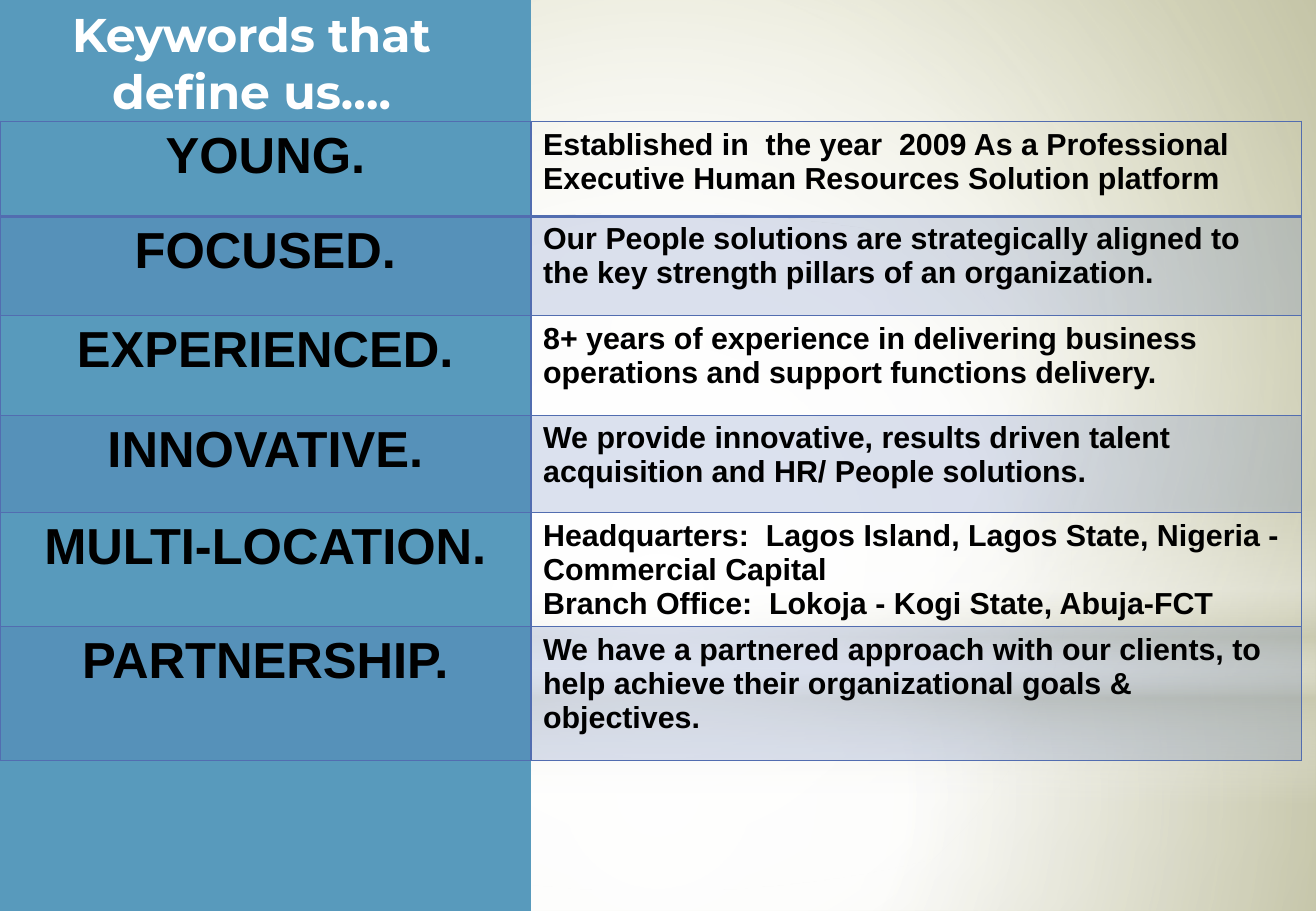
from dataclasses import dataclass

from lxml import etree
from pptx import Presentation
from pptx.dml.color import RGBColor
from pptx.enum.shapes import MSO_SHAPE
from pptx.enum.text import MSO_ANCHOR, PP_ALIGN
from pptx.oxml.ns import qn
from pptx.util import Inches, Pt

RECTANGLE, OVAL = MSO_SHAPE.RECTANGLE, MSO_SHAPE.OVAL
LEFT, CENTER = PP_ALIGN.LEFT, PP_ALIGN.CENTER
MIDDLE = MSO_ANCHOR.MIDDLE

COLORS = {
    "white": "FFFFFF",
    "black": "000000",
    "cream": "F7F7F2",
    "olive": "B8B881",
    "sand": "C8C8B1",
    "panel": "589ABC",
    "grid": "526DB0",
}
SLIDE_WIDTH, SLIDE_HEIGHT = 10.83, 7.5
KEYWORD_WIDTH, MEANING_WIDTH = 4.37, 6.34
CENTERED = (50, 50, 50, 50)


@dataclass(frozen=True)
class Stop:
    position: int
    color: str
    opacity: int = 100


@dataclass(frozen=True)
class Glow:
    outline: int
    box: tuple[float, float, float, float]
    stops: tuple[Stop, ...]
    focus: tuple[int, int, int, int] | None = CENTERED


@dataclass(frozen=True)
class Keyword:
    title: str
    meaning: str
    height: float


BACKDROP = (Stop(0, "white"), Stop(42, "cream"), Stop(100, "olive"))
GLOWS = (
    Glow(RECTANGLE, (0, 5.58, SLIDE_WIDTH, 1.92),
         (Stop(0, "white", 91), Stop(37, "white", 76), Stop(100, "sand", 79))),
    Glow(RECTANGLE, (0, 0, SLIDE_WIDTH, 5.58),
         (Stop(0, "white", 89), Stop(48, "white", 62), Stop(100, "sand", 79))),
    Glow(RECTANGLE, (0, 4.12, SLIDE_WIDTH, 2.5),
         (Stop(0, "white", 0), Stop(29, "white", 30), Stop(45, "sand", 40),
          Stop(55, "white", 26), Stop(65, "sand", 60), Stop(100, "white", 0)), None),
    Glow(OVAL, (0, 1.75, SLIDE_WIDTH, 5.58),
         (Stop(0, "white"), Stop(56, "white", 0))),
)
KEYWORDS = (
    Keyword("YOUNG.", "Established in  the year  2009 As a Professional "
            "Executive Human Resources Solution platform", 0.78),
    Keyword("FOCUSED.", "Our People solutions are strategically aligned to "
            "the key strength pillars of an organization.", 0.82),
    Keyword("EXPERIENCED.", "8+ years of experience in delivering business "
            "operations and support functions delivery.", 0.82),
    Keyword("INNOVATIVE.", "We provide innovative, results driven talent "
            "acquisition and HR/ People solutions.", 0.8),
    Keyword("MULTI-LOCATION.", "Headquarters:  Lagos Island, Lagos State, Nigeria - "
            "Commercial Capital\nBranch Office:  Lokoja - Kogi State, Abuja-FCT", 0.93),
    Keyword("PARTNERSHIP.", "We have a partnered approach with our clients, to "
            "help achieve their organizational goals & objectives.", 1.1),
)


def add_color(parent, color: str, opacity: int = 100) -> None:
    swatch = etree.SubElement(parent, qn("a:srgbClr"), val=COLORS[color])
    if opacity < 100:
        etree.SubElement(swatch, qn("a:alpha"), val=str(opacity * 1000))


def set_gradient(owner, stops: tuple[Stop, ...], focus) -> None:
    gradient = owner.find(".//" + qn("a:gradFill"))
    for child in list(gradient):
        gradient.remove(child)
    stop_list = etree.SubElement(gradient, qn("a:gsLst"))
    for stop in stops:
        mark = etree.SubElement(stop_list, qn("a:gs"), pos=str(stop.position * 1000))
        add_color(mark, stop.color, stop.opacity)
    if focus is None:
        etree.SubElement(gradient, qn("a:lin"), ang="5400000", scaled="0")
    else:
        spread = etree.SubElement(gradient, qn("a:path"), path="circle")
        edges = {side: str(value * 1000) for side, value in zip("ltrb", focus)}
        etree.SubElement(spread, qn("a:fillToRect"), **edges)


def add_plain(slide, outline: int, box: tuple[float, float, float, float]):
    plain = slide.shapes.add_shape(outline, *map(Inches, box))
    plain.shadow.inherit = False
    plain.line.fill.background()
    return plain


def add_glow(slide, glow: Glow) -> None:
    light = add_plain(slide, glow.outline, glow.box)
    light.fill.gradient()
    set_gradient(light.element, glow.stops, glow.focus)


def add_panel(slide, box: tuple[float, float, float, float]):
    panel = add_plain(slide, RECTANGLE, box)
    panel.fill.solid()
    panel.fill.fore_color.rgb = RGBColor.from_string(COLORS["panel"])
    return panel


def style_text(frame, font: str, size: int, color: str, align: int) -> None:
    for paragraph in frame.paragraphs:
        paragraph.alignment = align
        for run in paragraph.runs:
            run.font.name = font
            run.font.size = Pt(size)
            run.font.bold = True
            run.font.color.rgb = RGBColor.from_string(COLORS[color])


def add_heading(slide) -> None:
    heading = add_panel(slide, (0.11, 0.04, 4.18, 0.94))
    frame = heading.text_frame
    frame.text = "Keywords that \vdefine us…. "
    frame.word_wrap = False
    frame.vertical_anchor = MIDDLE
    frame.margin_left = frame.margin_top = frame.margin_bottom = Inches(0.05)
    frame.margin_right = Inches(0.2)
    style_text(frame, "Montserrat", 28, "white", CENTER)


def style_cell(cell, row: int) -> None:
    cell.fill.background()
    properties = cell._tc.get_or_add_tcPr()
    fill = properties.find(qn("a:noFill"))
    if row % 2:
        tint = etree.Element(qn("a:solidFill"))
        add_color(tint, "grid", 20)
        properties.replace(fill, tint)
        fill = tint
    for side in "LRTB":
        heavy = (row, side) in ((0, "B"), (1, "T"))
        border = etree.Element(qn(f"a:ln{side}"), w=str(Pt(2 if heavy else 1)))
        add_color(etree.SubElement(border, qn("a:solidFill")), "grid")
        fill.addprevious(border)


def add_keywords(slide) -> None:
    height = sum(keyword.height for keyword in KEYWORDS)
    table = slide.shapes.add_table(
        len(KEYWORDS), 2, 0, Inches(1),
        Inches(KEYWORD_WIDTH + MEANING_WIDTH), Inches(height)).table
    table.first_row = table.horz_banding = False
    for column, width in zip(table.columns, (KEYWORD_WIDTH, MEANING_WIDTH)):
        column.width = Inches(width)
    for row, keyword in enumerate(KEYWORDS):
        table.rows[row].height = Inches(keyword.height)
        entries = ((keyword.title, 30, CENTER), (keyword.meaning, 18, LEFT))
        for cell, (text, size, align) in zip(table.rows[row].cells, entries):
            cell.text_frame.text = text
            style_text(cell.text_frame, "Arial", size, "black", align)
            style_cell(cell, row)


def main() -> None:
    deck = Presentation()
    deck.slide_width, deck.slide_height = Inches(SLIDE_WIDTH), Inches(SLIDE_HEIGHT)
    slide = deck.slides.add_slide(deck.slide_layouts[6])
    slide.background.fill.gradient()
    set_gradient(slide.element, BACKDROP, (24, 44, 24, 12))
    for glow in GLOWS:
        add_glow(slide, glow)
    add_panel(slide, (0, 0, KEYWORD_WIDTH, 7.52))
    add_heading(slide)
    add_keywords(slide)
    deck.save("out.pptx")


if __name__ == "__main__":
    main()
